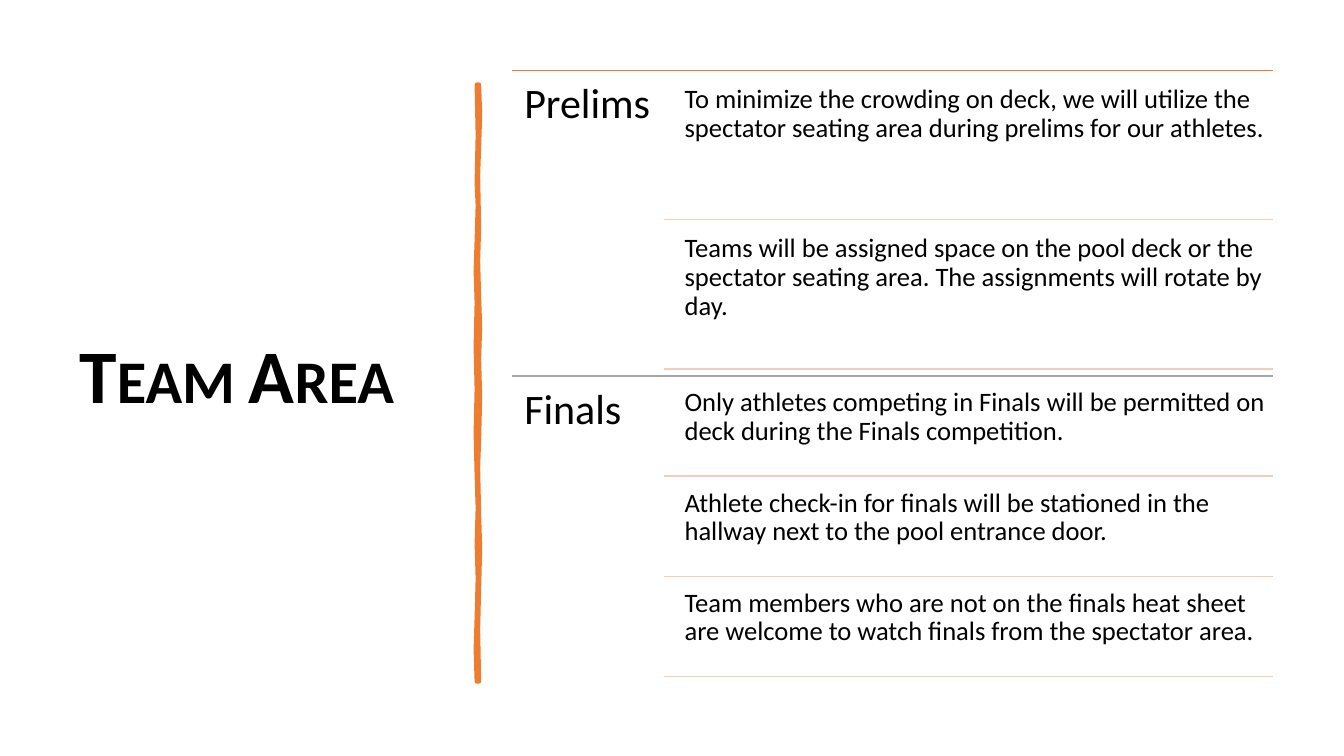
from lxml import etree
from pptx import Presentation
from pptx.dml.color import RGBColor
from pptx.enum.shapes import MSO_CONNECTOR
from pptx.enum.text import MSO_ANCHOR
from pptx.oxml.ns import qn
from pptx.util import Inches, Pt

STRAIGHT = MSO_CONNECTOR.STRAIGHT
TOP, MIDDLE = MSO_ANCHOR.TOP, MSO_ANCHOR.MIDDLE
BLACK = RGBColor(0x00, 0x00, 0x00)
ORANGE = RGBColor(0xED, 0x7D, 0x31)
PEACH = RGBColor(0xF5, 0xCB, 0xBC)
GRAY = RGBColor(0xA5, 0xA5, 0xA5)
FONT = "Calibri"
ROW_GAP_RATIO = 0.05
ROW_INDENT = 0.12

SECTIONS = [
    ("Prelims", ORANGE, [
        "To minimize the crowding on deck, we will utilize the spectator seating area during prelims for our athletes.",
        "Teams will be assigned space on the pool deck or the spectator seating area. The assignments will rotate by day.",
    ]),
    ("Finals", GRAY, [
        "Only athletes competing in Finals will be permitted on deck during the Finals competition.",
        "Athlete check-in for finals will be stationed in the hallway next to the pool entrance door.",
        "Team members who are not on the finals heat sheet are welcome to watch finals from the spectator area.",
    ]),
]

BAR_RIGHT_EDGE = [
    (0.02, 0), (0.03, 0.3), (0.02, 0.62), (0.01, 0.9), (0.02, 1.42), (0.01, 1.75),
    (0.02, 2.1), (0.03, 2.4), (0.02, 2.72), (0.03, 3.1), (0.02, 3.52), (0.01, 3.8),
    (0.02, 4.26), (0.03, 4.6), (0.02, 5), (0.01, 5.4), (0.02, 5.92),
]
BAR_LEFT_EDGE = [
    (0, 5.92), (-0.01, 5.6), (0, 5.29), (0.01, 4.9), (0, 4.55), (0.01, 4.2),
    (0, 3.87), (-0.01, 3.45), (0, 3.02), (-0.01, 2.6), (0, 2.16), (-0.01, 1.85),
    (0, 1.54), (0.01, 1.2), (0, 0.97), (0.01, 0.5), (0, 0),
]


def add_text(slide, box, text, size, inset, anchor=TOP):
    """Add a wrapped text box holding one run and return the run."""
    shape = slide.shapes.add_textbox(*map(Inches, box))
    frame = shape.text_frame
    frame.word_wrap = True
    frame.vertical_anchor = anchor
    frame.margin_left = frame.margin_right = Inches(inset[0])
    frame.margin_top = frame.margin_bottom = Inches(inset[1])
    paragraph = frame.paragraphs[0]
    paragraph.line_spacing = 0.9
    run = paragraph.add_run()
    run.text = text
    run.font.name = FONT
    run.font.size = Pt(size)
    run.font.color.rgb = BLACK
    return run


def add_rule(slide, left, right, top, color):
    """Draw a thin horizontal rule without a shadow."""
    rule = slide.shapes.add_connector(
        STRAIGHT, Inches(left), Inches(top), Inches(right), Inches(top))
    rule.line.color.rgb = color
    rule.line.width = Pt(1)
    etree.SubElement(rule._element.spPr, qn("a:effectLst"))


def add_title(slide, box):
    """Place the slide title in small capitals."""
    run = add_text(slide, box, "Team Area", 54, (0.1, 0.05), MIDDLE)
    run.font.bold = True
    run._r.get_or_add_rPr().set("cap", "small")


def add_brush_bar(slide, left, top):
    """Draw the wavy vertical divider from its two edges."""
    points = [(Inches(left + x), Inches(top + y)) for x, y in BAR_RIGHT_EDGE + BAR_LEFT_EDGE]
    builder = slide.shapes.build_freeform(*points[0])
    builder.add_line_segments(points[1:], close=True)
    bar = builder.convert_to_shape()
    bar.shadow.inherit = False
    bar.fill.solid()
    bar.fill.fore_color.rgb = ORANGE
    bar.line.color.rgb = ORANGE
    bar.line.width = Pt(3.25)
    outline = bar.line._get_or_add_ln()
    outline.set("cap", "rnd")
    etree.SubElement(outline, qn("a:round"))


def add_section(slide, box, heading, color, rows):
    """Place a heading with its ruled rows of text."""
    left, top, width, height = box
    right = left + width
    heading_width = width / 5
    add_rule(slide, left, right, top, color)
    add_text(slide, (left, top, heading_width, height), heading, 30, (0.12, 0.12))
    row_height = height / (len(rows) * (1 + ROW_GAP_RATIO) + ROW_GAP_RATIO)
    gap = row_height * ROW_GAP_RATIO
    rows_left = left + heading_width
    text_left = rows_left + ROW_INDENT
    for index, text in enumerate(rows):
        row_top = top + gap + index * (row_height + gap)
        add_text(slide, (text_left, row_top, right - text_left, row_height), text, 19, (0.08, 0.08))
        add_rule(slide, rows_left, right, row_top + row_height, PEACH)


def main():
    """Build the slide and save it."""
    presentation = Presentation()
    presentation.slide_width = Inches(13.33)
    presentation.slide_height = Inches(7.5)
    slide = presentation.slides.add_slide(presentation.slide_layouts[6])
    add_title(slide, (0.69, 0.7, 3.74, 6.11))
    add_brush_bar(slide, 4.73, 0.84)
    section_height = 3.03
    for index, section in enumerate(SECTIONS):
        add_section(slide, (5.08, 0.7 + index * section_height, 7.55, section_height), *section)
    presentation.save("out.pptx")


if __name__ == "__main__":
    main()
